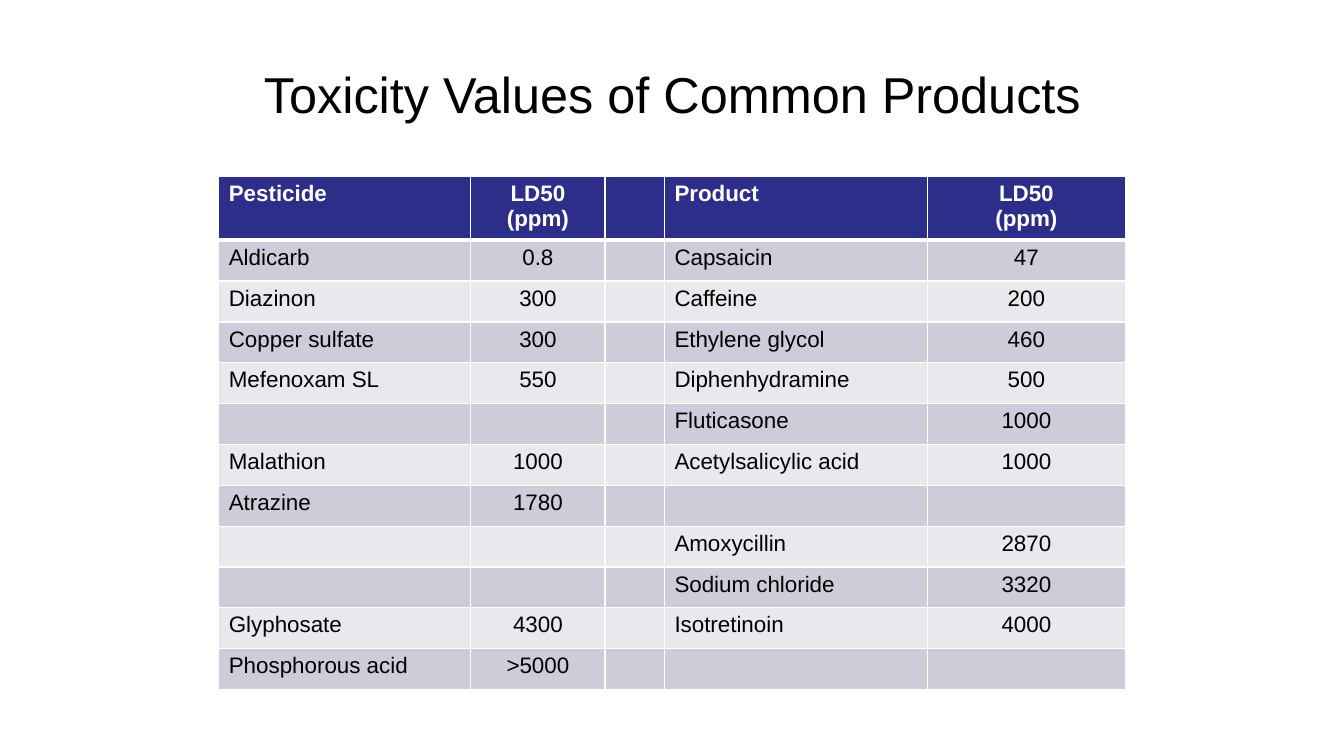
"""Build the slide that compares toxicity values of pesticides and products."""
from lxml import etree
from pptx import Presentation
from pptx.dml.color import RGBColor
from pptx.enum.text import MSO_ANCHOR, PP_ALIGN
from pptx.oxml.ns import qn
from pptx.util import Inches, Pt

LEFT, CENTER = PP_ALIGN.LEFT, PP_ALIGN.CENTER
MIDDLE = MSO_ANCHOR.MIDDLE
WHITE = RGBColor(0xFF, 0xFF, 0xFF)
BLACK = RGBColor(0, 0, 0)
NAVY = RGBColor(0x2D, 0x2D, 0x8A)
DARK = RGBColor(0xCD, 0xCD, 0xDA)
LIGHT = RGBColor(0xE8, 0xE8, 0xED)

TITLE = "Toxicity Values of Common Products"
ROWS = [
    ("Pesticide", "LD50\n(ppm)", "", "Product", "LD50\n(ppm)"),
    ("Aldicarb", "0.8", "", "Capsaicin", "47"),
    ("Diazinon", "300", "", "Caffeine", "200"),
    ("Copper sulfate", "300", "", "Ethylene glycol", "460"),
    ("Mefenoxam SL", "550", "", "Diphenhydramine", "500"),
    ("", "", "", "Fluticasone", "1000"),
    ("Malathion", "1000", "", "Acetylsalicylic acid", "1000"),
    ("Atrazine", "1780", "", "", ""),
    ("", "", "", "Amoxycillin", "2870"),
    ("", "", "", "Sodium chloride", "3320"),
    ("Glyphosate", "4300", "", "Isotretinoin", "4000"),
    ("Phosphorous acid", ">5000", "", "", ""),
]
WIDTHS = [2.5, 1.33, 0.59, 2.61, 1.96]
ALIGNS = [LEFT, CENTER, LEFT, LEFT, CENTER]
HEAD, BODY = 0.58, 4.46

TITLE_FONT = {"name": "Arial", "size": Pt(36)}
HEAD_FONT = {"name": "Arial", "size": Pt(16), "bold": True}
BODY_FONT = {"name": "Arial", "size": Pt(16), "bold": False}


def write(frame, text, align, style, color):
    """Fill a text frame with styled paragraphs, one for each line."""
    for num, line in enumerate(text.split("\n")):
        para = frame.add_paragraph() if num else frame.paragraphs[0]
        para.alignment = align
        if line:
            run = para.add_run()
            run.text = line
            for key, value in style.items():
                setattr(run.font, key, value)
            run.font.color.rgb = color


def edge(cell, top, bottom):
    """Draw white borders round a cell, with widths in points."""
    props = cell._tc.get_or_add_tcPr()
    for tag, width in (("lnL", 1), ("lnR", 1), ("lnT", top), ("lnB", bottom)):
        line = etree.SubElement(props, qn("a:" + tag), w=str(Pt(width)))
        fill = etree.SubElement(line, qn("a:solidFill"))
        etree.SubElement(fill, qn("a:srgbClr"), val=str(WHITE))


def main():
    """Lay out the title and the table, then save."""
    deck = Presentation()
    deck.slide_width, deck.slide_height = Inches(13.33), Inches(7.5)
    slide = deck.slides.add_slide(deck.slide_layouts[6])

    box = slide.shapes.add_textbox(
        Inches(0.67), Inches(0.3), Inches(12), Inches(1.25))
    frame = box.text_frame
    frame.word_wrap = True
    frame.vertical_anchor = MIDDLE
    write(frame, TITLE, CENTER, TITLE_FONT, BLACK)

    table = slide.shapes.add_table(
        len(ROWS), len(WIDTHS), Inches(2.17), Inches(1.75),
        Inches(sum(WIDTHS)), Inches(HEAD + BODY)).table
    for column, width in zip(table.columns, WIDTHS):
        column.width = Inches(width)

    for r, row in enumerate(ROWS):
        high = BODY / (len(ROWS) - 1) if r else HEAD
        table.rows[r].height = Inches(high)
        style, color = (BODY_FONT, BLACK) if r else (HEAD_FONT, WHITE)
        shade = (DARK if r % 2 else LIGHT) if r else NAVY
        for c, text in enumerate(row):
            cell = table.cell(r, c)
            edge(cell, 3 if r == 1 else 1, 1 if r else 3)
            cell.fill.solid()
            cell.fill.fore_color.rgb = shade
            write(cell.text_frame, text, ALIGNS[c], style, color)

    deck.save("out.pptx")


if __name__ == "__main__":
    main()
